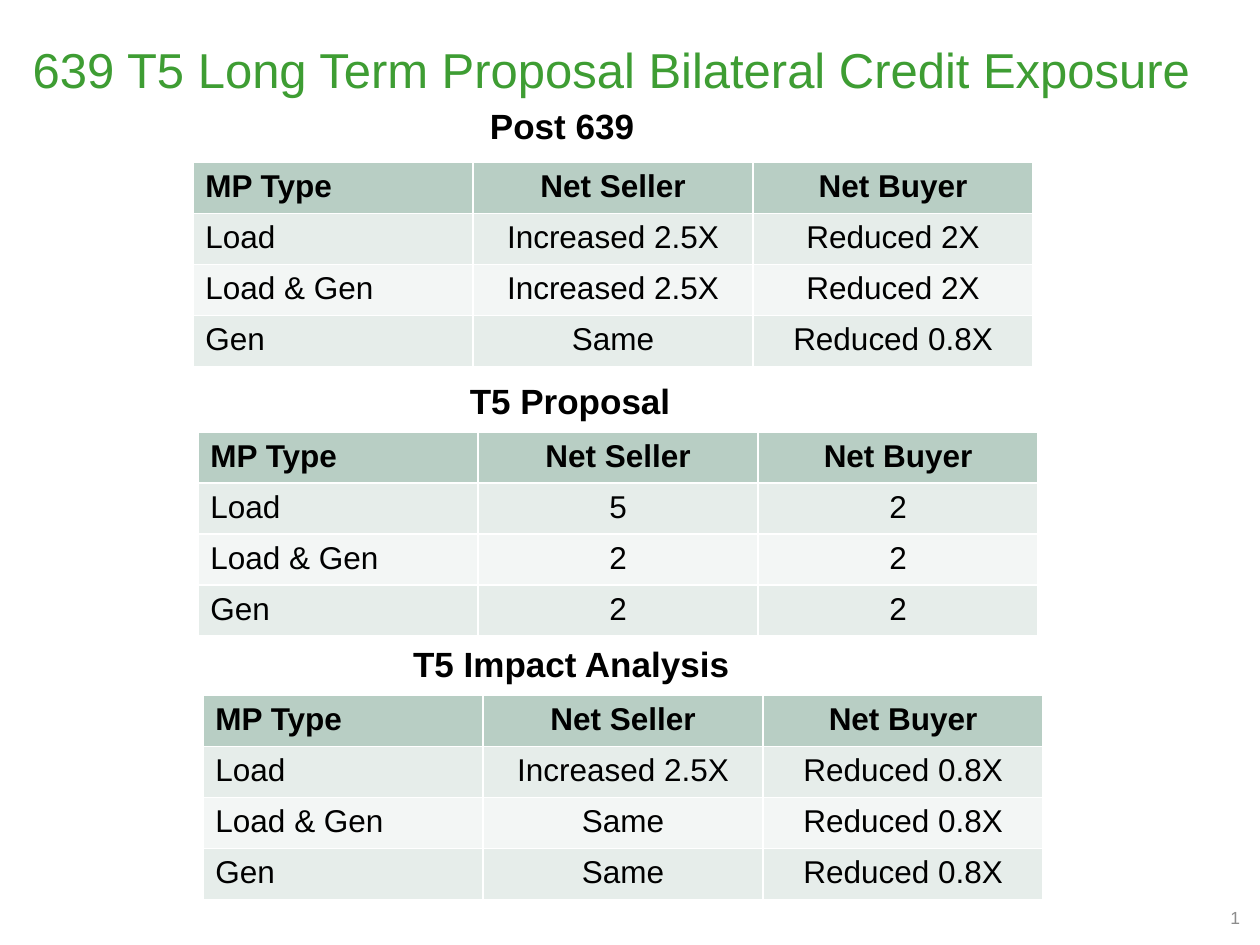
"""Build the bilateral credit exposure slide with its three comparison tables."""
from dataclasses import dataclass

from pptx import Presentation
from pptx.dml.color import RGBColor
from pptx.enum.text import MSO_ANCHOR, MSO_AUTO_SIZE, PP_ALIGN
from pptx.util import Inches, Pt


@dataclass(frozen=True)
class Theme:
    font: str = "Arial"
    title_color: str = "3E9D33"
    text_color: str = "000000"
    number_color: str = "8C8C8C"
    header_fill: str = "B8CEC4"
    odd_fill: str = "E6EDEA"
    even_fill: str = "F3F6F5"
    title_size: int = 28
    heading_size: int = 20
    table_size: int = 18
    number_size: int = 10


theme = Theme()


def write_text(text_frame, text, size, color, bold=False, alignment=PP_ALIGN.LEFT):
    text_frame.text = text
    paragraph = text_frame.paragraphs[0]
    paragraph.alignment = alignment
    font = paragraph.runs[0].font
    font.name = theme.font
    font.size = Pt(size)
    font.bold = bold
    font.color.rgb = RGBColor.from_string(color)


def add_text_box(slide, left, top, width, height):
    box = slide.shapes.add_textbox(Inches(left), Inches(top), Inches(width), Inches(height))
    box.text_frame.word_wrap = True
    return box.text_frame


header = ("MP Type", "Net Seller", "Net Buyer")
sections = [
    ("Post 639", (3.79, 0.78, 1.88), (1.53, 1.29), [
        ("Load", "Increased 2.5X", "Reduced 2X"),
        ("Load & Gen", "Increased 2.5X", "Reduced 2X"),
        ("Gen", "Same", "Reduced 0.8X"),
    ]),
    ("T5 Proposal", (3.63, 2.96, 1.88), (1.57, 3.43), [
        ("Load", "5", "2"),
        ("Load & Gen", "2", "2"),
        ("Gen", "2", "2"),
    ]),
    ("T5 Impact Analysis", (3.18, 5.05, 4.69), (1.61, 5.52), [
        ("Load", "Increased 2.5X", "Reduced 0.8X"),
        ("Load & Gen", "Same", "Reduced 0.8X"),
        ("Gen", "Same", "Reduced 0.8X"),
    ]),
]

presentation = Presentation()
presentation.slide_width = Inches(10)
presentation.slide_height = Inches(7.5)
slide = presentation.slides.add_slide(presentation.slide_layouts[5])

title = slide.shapes.title
title.left, title.top = Inches(0.16), Inches(0.26)
title.width, title.height = Inches(9.71), Inches(0.57)
title.text_frame.auto_size = MSO_AUTO_SIZE.SHAPE_TO_FIT_TEXT
title.text_frame.vertical_anchor = MSO_ANCHOR.TOP
write_text(title.text_frame, "639 T5 Long Term Proposal Bilateral Credit Exposure",
           theme.title_size, theme.title_color)

number_frame = add_text_box(slide, 8.55, 7.08, 1.39, 0.4)
number_frame.vertical_anchor = MSO_ANCHOR.MIDDLE
write_text(number_frame, "1", theme.number_size, theme.number_color, alignment=PP_ALIGN.RIGHT)

for heading, (heading_left, heading_top, heading_width), (left, top), body in sections:
    heading_frame = add_text_box(slide, heading_left, heading_top, heading_width, 0.44)
    heading_frame.auto_size = MSO_AUTO_SIZE.SHAPE_TO_FIT_TEXT
    write_text(heading_frame, heading, theme.heading_size, theme.text_color, bold=True)

    rows = [header, *body]
    table = slide.shapes.add_table(len(rows), len(header), Inches(left), Inches(top),
                                   Inches(6.67), Inches(1.62)).table
    for row_index, values in enumerate(rows):
        is_header = row_index == 0
        row_fill = theme.odd_fill if row_index % 2 else theme.even_fill
        for column_index, value in enumerate(values):
            cell = table.cell(row_index, column_index)
            cell.fill.solid()
            cell.fill.fore_color.rgb = RGBColor.from_string(theme.header_fill if is_header else row_fill)
            write_text(cell.text_frame, value, theme.table_size, theme.text_color, bold=is_header,
                       alignment=PP_ALIGN.CENTER if column_index else PP_ALIGN.LEFT)

presentation.save("out.pptx")
